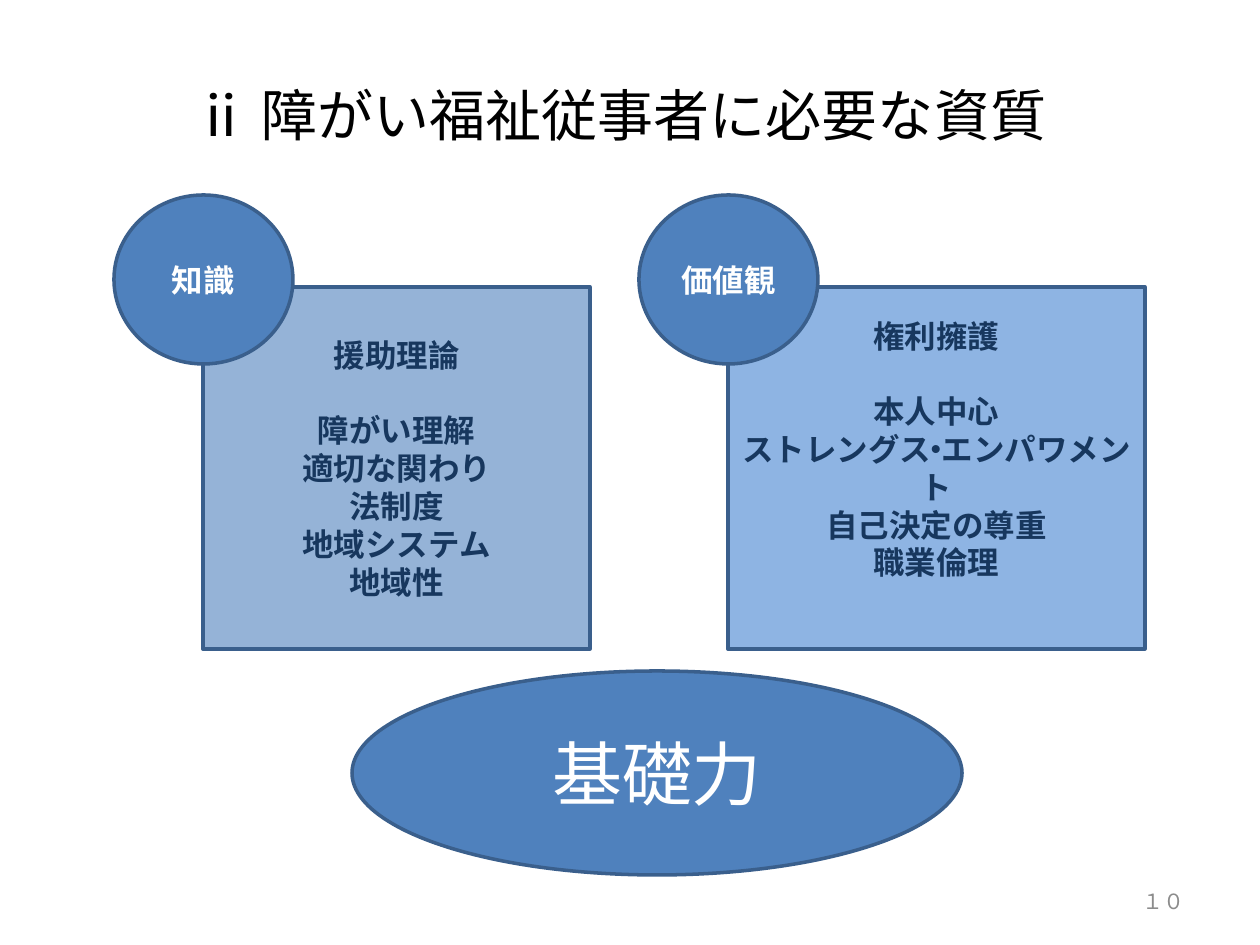
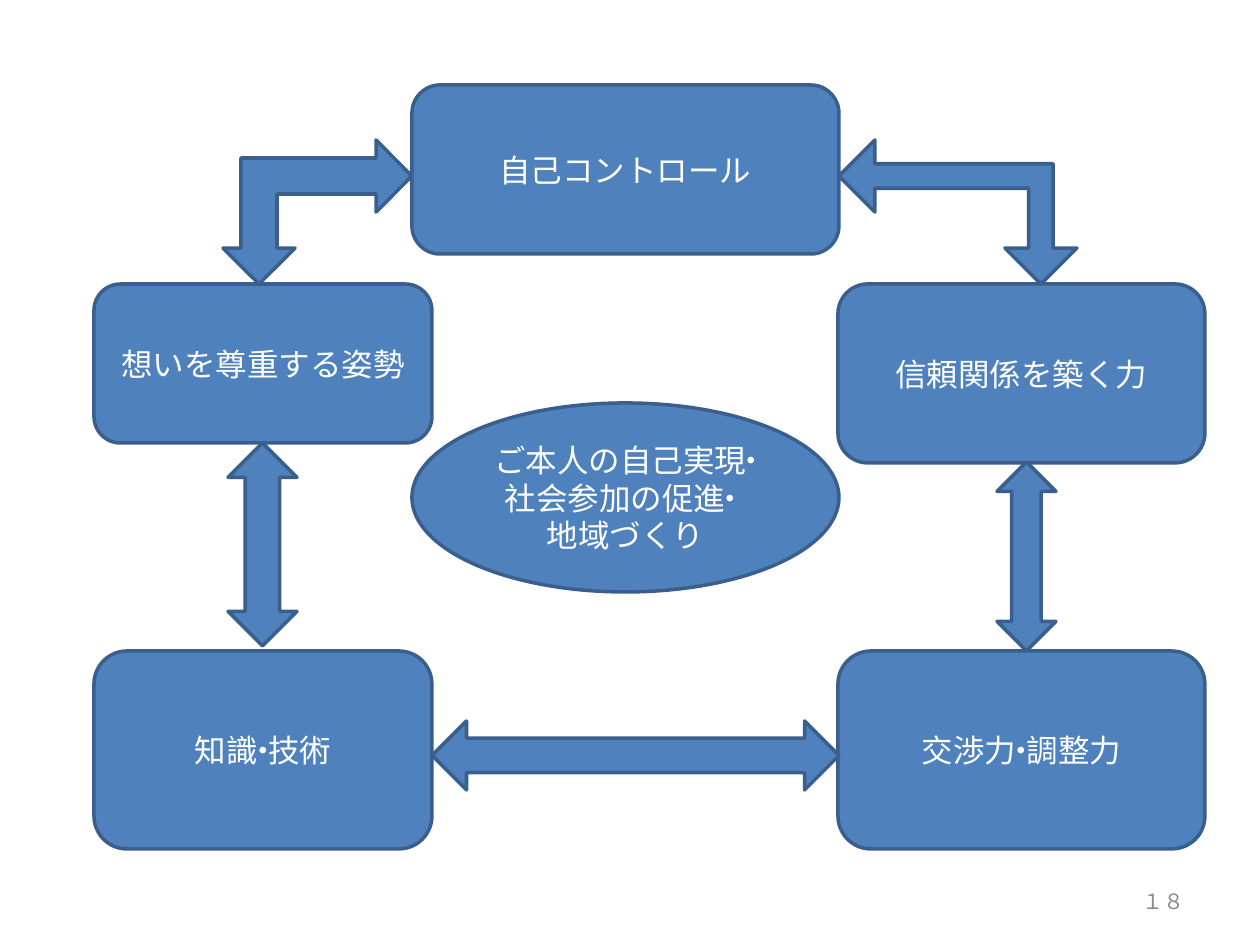
"""Build two slides on the qualities needed by disability welfare workers."""
import itertools
import pptx
import pptx.dml.color
import pptx.enum.shapes
import pptx.enum.text
import pptx.util
import lxml.etree

RGBColor = pptx.dml.color.RGBColor
Kind = pptx.enum.shapes.MSO_SHAPE
Align = pptx.enum.text.PP_ALIGN

BLUE = RGBColor(0x4F, 0x81, 0xBD)
OUTLINE = RGBColor(0x3A, 0x5F, 0x8C)
GRAY_BLUE = RGBColor(0x95, 0xB3, 0xD7)
SKY_BLUE = RGBColor(0x8E, 0xB4, 0xE3)
NAVY = RGBColor(0x17, 0x37, 0x5E)
WHITE = RGBColor(0xFF, 0xFF, 0xFF)
BLACK = RGBColor(0x00, 0x00, 0x00)
GRAY = RGBColor(0x8C, 0x8C, 0x8C)
BODY_FONT = "Calibri"
TITLE_FONT = "Noto Sans CJK JP"

PX = 914400 / 126
SLIDE_SIZE = (1260, 945)
TITLE_AREA = (133, 55, 974, 118)
NUMBER_AREA = (903, 876, 294, 50)
LINE_HEIGHT = 38
LINE_POINTS = 21.6
MIDDLE_DOT = "・"
DOT_SPACING = -600

TITLE = "ⅱ 障がい福祉従事者に必要な資質"
PANEL_TOP, PANEL_HEIGHT = 287, 362
BADGE_OFFSET, BADGE_SIZE = (-89, -92), (179, 169)
PANELS = [
    {"badge": "知識", "left": 203, "width": 387, "fill": GRAY_BLUE, "lift": 0,
     "lines": ["援助理論", "障がい理解", "適切な関わり", "法制度",
               "地域システム", "地域性"]},
    {"badge": "価値観", "left": 728, "width": 417, "fill": SKY_BLUE, "lift": LINE_HEIGHT,
     "lines": ["権利擁護", "本人中心", "ストレングス・エンパワメント",
               "自己決定の尊重", "職業倫理"]},
]
FOUNDATION = ("基礎力", (352, 671, 610, 204))

GOAL = (["ご本人の自己実現・社会参加の促進・", "地域づくり"], (412, 403, 427, 189))
LEFT_COLUMN, RIGHT_COLUMN = (94, 338), (838, 367)
ABILITIES = [
    ("自己コントロール", (412, 427), (85, 169)),
    ("想いを尊重する姿勢", LEFT_COLUMN, (284, 159)),
    ("信頼関係を築く力", RIGHT_COLUMN, (284, 179)),
    ("知識・技術", LEFT_COLUMN, (651, 198)),
    ("交渉力・調整力", RIGHT_COLUMN, (651, 198)),
]
ARROWS = [
    (Kind.UP_DOWN_ARROW, (997, 462, 59, 189), 0, None),
    (Kind.UP_DOWN_ARROW, (228, 443, 69, 203), 0, None),
    (Kind.LEFT_RIGHT_ARROW, (432, 721, 407, 69), 0, None),
    (Kind.LEFT_UP_ARROW, (886, 93, 144, 238), 270, 0.17),
    (Kind.LEFT_UP_ARROW, (223, 140, 189, 144), 180, None),
]


def emu(*lengths):
    return [round(length * PX) for length in lengths]


def split_at_dots(line):
    """Yield pieces of a line, telling those around a middle dot from the rest."""
    def near_dot(index):
        return MIDDLE_DOT in line[max(index - 1, 0):index + 2]

    for tight, indexes in itertools.groupby(range(len(line)), near_dot):
        yield tight, "".join(line[index] for index in indexes)


def write(shape, lines, size=18, color=WHITE, bold=False, font=BODY_FONT,
          align=Align.CENTER, first_gap=0, lift=0):
    frame = shape.text_frame
    frame.word_wrap = True
    frame.vertical_anchor = pptx.enum.text.MSO_ANCHOR.MIDDLE
    frame.margin_bottom += emu(lift)[0]
    lines = [lines] if isinstance(lines, str) else lines
    for index, line in enumerate(lines):
        paragraph = frame.add_paragraph() if index else frame.paragraphs[0]
        paragraph.alignment = align
        if index == 0 and first_gap:
            paragraph.space_after = pptx.util.Pt(first_gap)
        for tight, piece in split_at_dots(line):
            run = paragraph.add_run()
            run.text = piece
            run.font.size = pptx.util.Pt(size)
            run.font.bold = bold
            run.font.color.rgb = color
            run.font.name = font
            properties = run.font._element
            east_asian = lxml.etree.SubElement(properties, pptx.oxml.ns.qn("a:ea"))
            east_asian.set("typeface", font)
            if tight:
                properties.set("spc", str(DOT_SPACING))


def add_shape(slide, kind, area, fill=BLUE):
    shape = slide.shapes.add_shape(kind, *emu(*area))
    shape.shadow.inherit = False
    shape.fill.solid()
    shape.fill.fore_color.rgb = fill
    shape.line.color.rgb = OUTLINE
    shape.line.width = pptx.util.Pt(2)
    return shape


def add_slide(presentation, number):
    slide = presentation.slides.add_slide(presentation.slide_layouts[6])
    write(slide.shapes.add_textbox(*emu(*NUMBER_AREA)), number,
          size=12, color=GRAY, align=Align.RIGHT)
    return slide


def build_qualities(presentation):
    slide = add_slide(presentation, "１０")
    write(slide.shapes.add_textbox(*emu(*TITLE_AREA)), TITLE,
          size=32, color=BLACK, font=TITLE_FONT)
    for panel in PANELS:
        area = (panel["left"], PANEL_TOP, panel["width"], PANEL_HEIGHT)
        box = add_shape(slide, Kind.RECTANGLE, area, panel["fill"])
        write(box, panel["lines"], color=NAVY, bold=True,
              first_gap=LINE_POINTS, lift=panel["lift"])
        corner = (panel["left"] + BADGE_OFFSET[0], PANEL_TOP + BADGE_OFFSET[1])
        write(add_shape(slide, Kind.OVAL, corner + BADGE_SIZE), panel["badge"], bold=True)
    text, area = FOUNDATION
    write(add_shape(slide, Kind.OVAL, area), text, size=40)


def build_cycle(presentation):
    slide = add_slide(presentation, "１８")
    lines, area = GOAL
    write(add_shape(slide, Kind.OVAL, area), lines)
    for text, (left, width), (top, height) in ABILITIES:
        write(add_shape(slide, Kind.ROUNDED_RECTANGLE, (left, top, width, height)), text)
    for kind, area, rotation, thickness in ARROWS:
        arrow = add_shape(slide, kind, area)
        arrow.rotation = rotation
        if thickness:
            arrow.adjustments[0] = thickness


def main():
    presentation = pptx.Presentation()
    presentation.slide_width, presentation.slide_height = emu(*SLIDE_SIZE)
    build_qualities(presentation)
    build_cycle(presentation)
    presentation.save("out.pptx")


if __name__ == "__main__":
    main()
